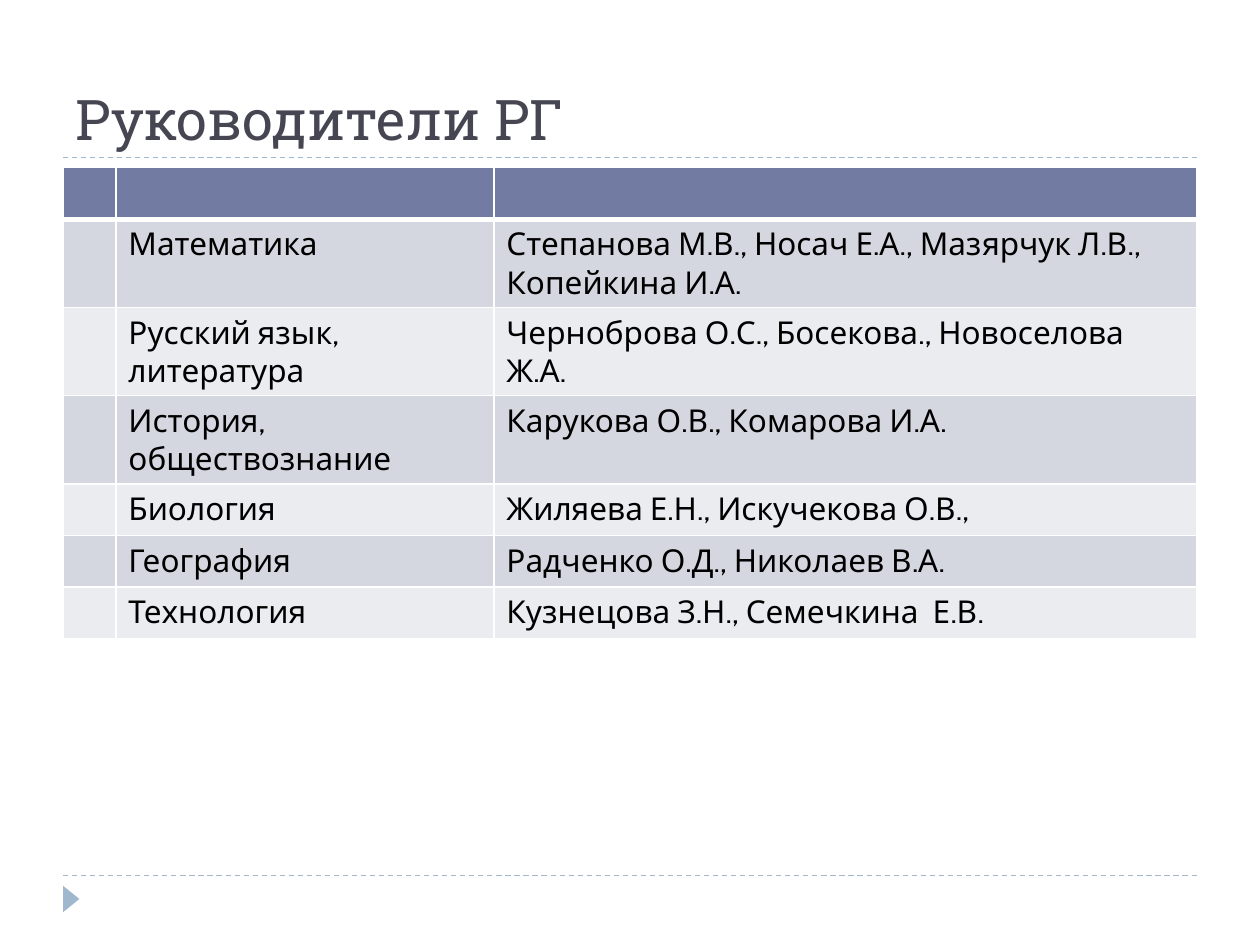
from lxml import etree
from pptx import Presentation
from pptx.dml.color import RGBColor
from pptx.enum.dml import MSO_LINE
from pptx.enum.shapes import MSO_CONNECTOR, MSO_SHAPE
from pptx.enum.text import MSO_ANCHOR
from pptx.oxml.ns import qn
from pptx.util import Inches, Pt

DASH = MSO_LINE.DASH
STRAIGHT = MSO_CONNECTOR.STRAIGHT
TRIANGLE = MSO_SHAPE.ISOSCELES_TRIANGLE
BOTTOM = MSO_ANCHOR.BOTTOM

COLORS = {
    "accent": "9FB8CD",
    "title": "464653",
    "header": "727CA3",
    "odd": "D5D7E0",
    "even": "EBECF0",
    "border": "FFFFFF",
    "text": "000000",
}
LEADERS = [
    ("Математика", "Степанова М.В., Носач Е.А., Мазярчук Л.В., Копейкина И.А."),
    ("Русский язык, литература", "Черноброва О.С., Босекова., Новоселова Ж.А."),
    ("История, обществознание", "Карукова О.В., Комарова И.А."),
    ("Биология", "Жиляева Е.Н., Искучекова О.В.,"),
    ("География", "Радченко О.Д., Николаев В.А."),
    ("Технология", "Кузнецова З.Н., Семечкина  Е.В."),
]


def rgb(name):
    return RGBColor.from_string(COLORS[name])


class SlideBuilder:
    heading_font = "Roboto Slab"
    body_font = "Cabin"
    columns, rows = 20, 30

    def __init__(self, deck):
        self.page = deck.slides.add_slide(deck.slide_layouts[6])
        self.column = deck.slide_width / self.columns
        self.row = deck.slide_height / self.rows

    def across(self, count):
        return round(count * self.column)

    def down(self, count):
        return round(count * self.row)

    def area(self, left, top, width, height):
        return self.across(left), self.down(top), self.across(width), self.down(height)

    def set_text(self, para, text, font, size, color):
        para.text = text
        para.font.name = font
        para.font.size = Pt(size)
        para.font.color.rgb = rgb(color)

    def rule(self, row):
        line = self.page.shapes.add_connector(
            STRAIGHT, self.across(1), self.down(row), self.across(19), self.down(row))
        line.line.color.rgb = rgb("accent")
        line.line.width = Pt(0.75)
        line.line.dash_style = DASH
        etree.SubElement(line.element.spPr, qn("a:effectLst"))

    def marker(self, *place):
        shape = self.page.shapes.add_shape(TRIANGLE, *self.area(*place))
        shape.rotation = 90
        shape.shadow.inherit = False
        shape.fill.solid()
        shape.fill.fore_color.rgb = rgb("accent")
        shape.line.fill.background()

    def title(self, text, *place):
        box = self.page.shapes.add_textbox(*self.area(*place))
        box.text_frame.word_wrap = True
        box.text_frame.vertical_anchor = BOTTOM
        self.set_text(box.text_frame.paragraphs[0], text, self.heading_font, 32, "title")

    def border(self, cell, top, bottom):
        properties = cell._tc.get_or_add_tcPr()
        for index, (side, width) in enumerate(
                [("lnL", 1), ("lnR", 1), ("lnT", top), ("lnB", bottom)]):
            line = etree.Element(qn(f"a:{side}"), w=str(Pt(width)))
            fill = etree.SubElement(line, qn("a:solidFill"))
            etree.SubElement(fill, qn("a:srgbClr"), val=COLORS["border"])
            properties.insert(index, line)

    def table(self, records, left, top, widths, row_height):
        frame = self.page.shapes.add_table(
            len(records), len(widths),
            *self.area(left, top, sum(widths), row_height * len(records)))
        grid = frame.table
        for column, width in zip(grid.columns, widths):
            column.width = self.across(width)
        for number, (row, record) in enumerate(zip(grid.rows, records)):
            row.height = self.down(row_height)
            shade = "header" if number == 0 else ("even", "odd")[number % 2]
            for cell, text in zip(row.cells, record):
                cell.fill.solid()
                cell.fill.fore_color.rgb = rgb(shade)
                self.border(cell, 3 if number == 1 else 1, 3 if number == 0 else 1)
                self.set_text(cell.text_frame.paragraphs[0], text, self.body_font, 18, "text")


def main():
    deck = Presentation()
    deck.slide_width, deck.slide_height = Inches(10), Inches(7.5)
    slide = SlideBuilder(deck)
    for row in (27.8, 5):
        slide.rule(row)
    slide.marker(0.92, 28.28, 0.42, 0.52)
    slide.title("Руководители РГ", 1, 0.68, 18, 4.32)
    records = [("", "", "")] + [("", subject, names) for subject, names in LEADERS]
    slide.table(records, 1, 5.32, (0.84, 6, 11.16), 1.64)
    deck.save("out.pptx")


if __name__ == "__main__":
    main()
